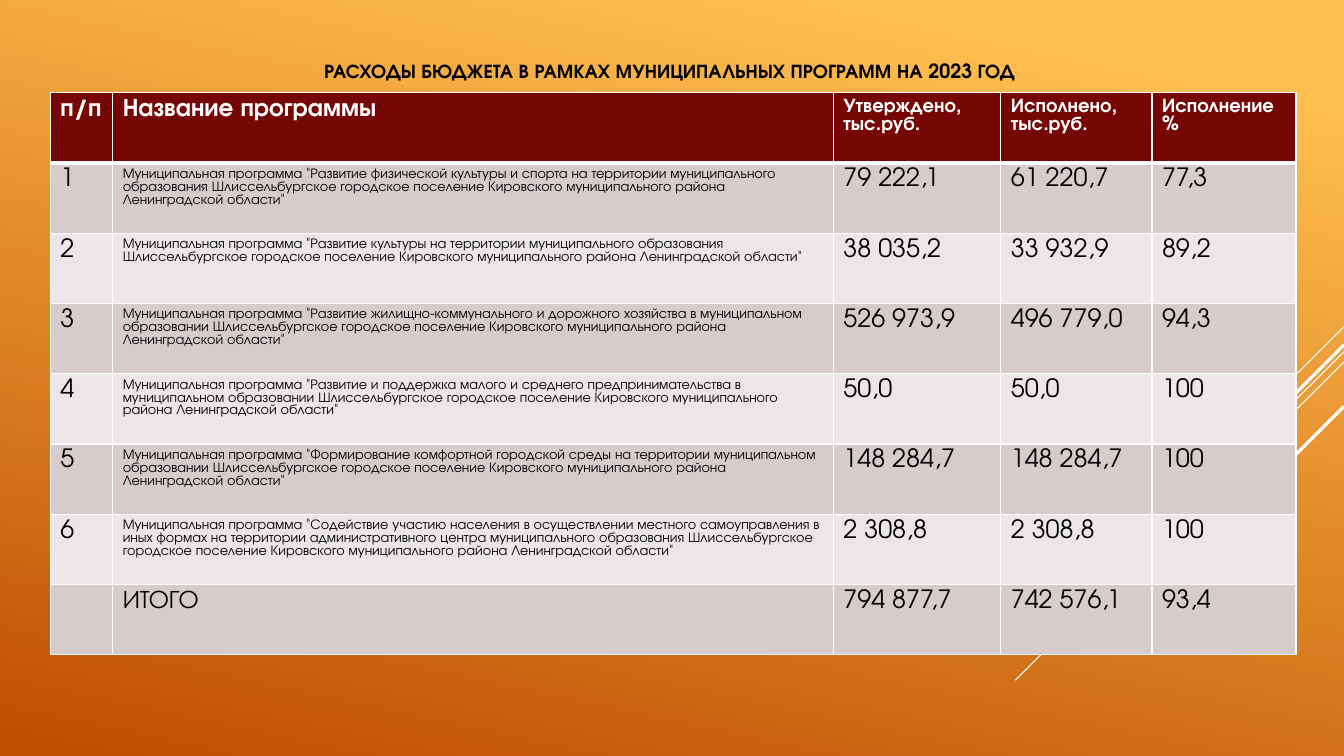
from pptx import Presentation
from pptx.dml.color import RGBColor
from pptx.enum.shapes import MSO_CONNECTOR
from pptx.enum.text import MSO_ANCHOR, PP_ALIGN
from pptx.oxml.ns import qn
from pptx.util import Cm, Pt
from lxml.etree import SubElement

FONT = "TeX Gyre Adventor"
WIDTH, HEIGHT = 33.87, 19.05
WHITE, BLACK, MAROON = "FFFFFF", "000000", "760603"
BANDS = ["D6CCCC", "ECE7E7"]

# Diagonal rays from the right edge: start height, run, line width
RAYS = [(8.23, 2.54, 0.75), (8.86, 8.28, 0.75), (9.12, 5.26, 0.75),
        (8.69, 4.85, 2.25), (10.24, 3.53, 2.25)]

# Table content
COLS = [1.57, 18.16, 4.22, 3.81, 3.63]
ROW = 1.77
HEAD = ["п/п", "Название программы", "Утверждено, тыс.руб.",
        "Исполнено, тыс.руб.", "Исполнение %"]
PLACE = ("Шлиссельбургское городское поселение Кировского "
         "муниципального района Ленинградской области")
PLANS = [
    ("Развитие физической культуры и спорта на территории "
     "муниципального образования", "79 222,1", "61 220,7", "77,3"),
    ("Развитие культуры на территории муниципального образования",
     "38 035,2", "33 932,9", "89,2"),
    ("Развитие жилищно-коммунального и дорожного хозяйства "
     "в муниципальном образовании", "526 973,9", "496 779,0", "94,3"),
    ("Развитие и поддержка малого и среднего предпринимательства "
     "в муниципальном образовании", "50,0", "50,0", "100"),
    ("Формирование комфортной городской среды на территории "
     "муниципальном образовании", "148 284,7", "148 284,7", "100"),
    ("Содействие участию населения в осуществлении местного "
     "самоуправления в иных формах на территории административного "
     "центра муниципального образования", "2 308,8", "2 308,8", "100"),
]
TOTAL = ["", "ИТОГО", "794 877,7", "742 576,1", "93,4"]


def color(code):
    return RGBColor.from_string(code)


def write(frame, text, size, ink, bold=False):
    run = frame.paragraphs[0].add_run()
    run.text = text
    style = {"name": FONT, "size": Pt(size), "bold": bold}
    for key, value in style.items():
        setattr(run.font, key, value)
    run.font.color.rgb = color(ink)


def paint(slide):
    fill = slide.background.fill
    fill.gradient()
    fill.gradient_angle = 258
    stops = [(0.1, "FFBF50"), (1, "C04D00")]
    for stop, (place, code) in zip(fill.gradient_stops, stops):
        stop.position = place
        stop.color.rgb = color(code)


def add_ray(slide, top, run, width):
    ray = slide.shapes.add_connector(
        MSO_CONNECTOR.STRAIGHT, Cm(WIDTH), Cm(top),
        Cm(WIDTH - run), Cm(top + run))
    ray.line.color.rgb = color(WHITE)
    ray.line.width = Pt(width)
    SubElement(ray.element.spPr, qn("a:effectLst"))


def add_title(slide, text):
    box = slide.shapes.add_textbox(Cm(1.9), Cm(1.45), Cm(29.95), Cm(0.66))
    frame = box.text_frame
    layout = {"word_wrap": True, "vertical_anchor": MSO_ANCHOR.MIDDLE,
              "margin_top": 0, "margin_bottom": 0}
    for key, value in layout.items():
        setattr(frame, key, value)
    frame.paragraphs[0].alignment = PP_ALIGN.CENTER
    write(frame, text, 14, BLACK, True)


def set_edges(cell, top, bottom):
    props = cell._tc.get_or_add_tcPr()
    for side, width in {"L": 1, "R": 1, "T": top, "B": bottom}.items():
        line = SubElement(props, qn("a:ln" + side), w=str(Pt(width)))
        fill = SubElement(line, qn("a:solidFill"))
        SubElement(fill, qn("a:srgbClr"), val=WHITE)


def fill_cell(cell, text, row, col):
    head = row == 0
    set_edges(cell, 3 if row == 1 else 1, 3 if head else 1)
    cell.fill.solid()
    cell.fill.fore_color.rgb = color(MAROON if head else BANDS[(row - 1) % 2])
    if head:
        size = 18 if col < 2 else 14
    else:
        size = 10 if col == 1 and text != TOTAL[1] else 18
    if text:
        write(cell.text_frame, text, size, WHITE if head else BLACK, head)


def add_grid(slide, rows):
    table = slide.shapes.add_table(
        len(rows), len(COLS), Cm(1.27), Cm(2.34),
        Cm(sum(COLS)), Cm(ROW * len(rows))).table
    for column, width in zip(table.columns, COLS):
        column.width = Cm(width)
    for r, texts in enumerate(rows):
        table.rows[r].height = Cm(ROW)
        for c, text in enumerate(texts):
            fill_cell(table.cell(r, c), text, r, c)


def main():
    deck = Presentation()
    deck.slide_width, deck.slide_height = Cm(WIDTH), Cm(HEIGHT)
    slide = deck.slides.add_slide(deck.slide_layouts[6])

    # Backdrop
    paint(slide)
    for ray in RAYS:
        add_ray(slide, *ray)

    # Heading and budget table
    add_title(slide, "РАСХОДЫ БЮДЖЕТА В РАМКАХ МУНИЦИПАЛЬНЫХ ПРОГРАММ "
                     "НА 2023 ГОД")
    body = [[str(i), f'Муниципальная программа "{name} {PLACE}"', *sums]
            for i, (name, *sums) in enumerate(PLANS, 1)]
    add_grid(slide, [HEAD, *body, TOTAL])

    deck.save("out.pptx")


if __name__ == "__main__":
    main()
